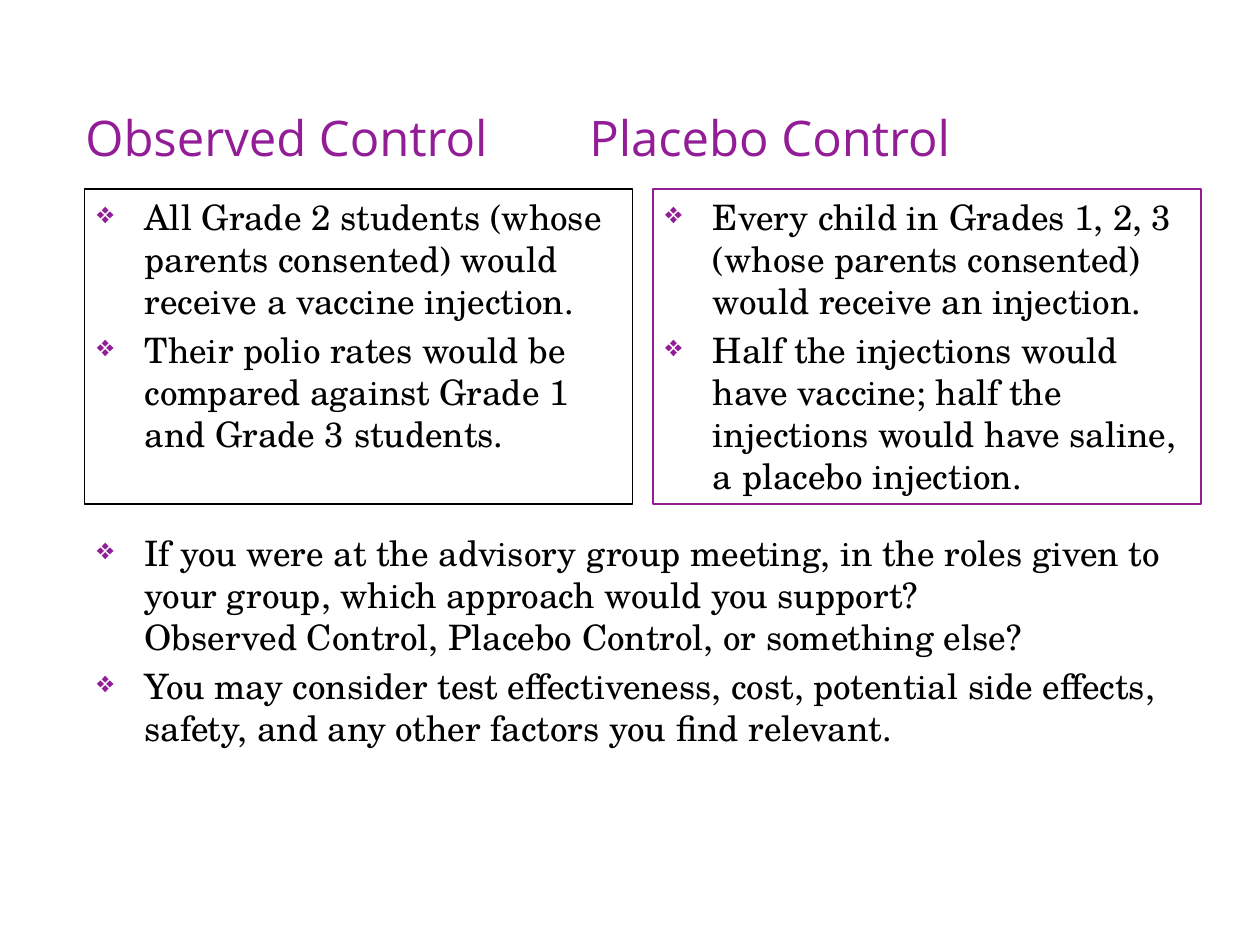
from lxml.etree import SubElement
from pptx import Presentation
from pptx.dml.color import RGBColor
from pptx.enum.shapes import MSO_SHAPE as Shape
from pptx.enum.text import MSO_ANCHOR as Anchor, PP_ALIGN as Align
from pptx.oxml.ns import qn
from pptx.util import Inches, Pt

PURPLE = "921D97"
BLACK = "000000"
MARGIN = 0.67
PANEL_TOP, PANEL_WIDTH, PANEL_HEIGHT = 1.5, 4.35, 2.5
PANEL_STEP = 4.51

PANELS = [
    (BLACK, 0.75, [
        "All Grade 2 students (whose parents consented) would receive a vaccine injection.",
        "Their polio rates would be compared against Grade 1 and Grade 3 students.",
    ]),
    (PURPLE, 1, [
        "Every child in Grades 1, 2, 3 (whose parents consented) would receive an injection.",
        "Half the injections would have vaccine; half the injections would have saline, a placebo injection.",
    ]),
]
QUESTIONS = [
    "If you were at the advisory group meeting, in the roles given to your group, "
    "which approach would you support? \vObserved Control, Placebo Control, or something else?",
    "You may consider test effectiveness, cost, potential side effects, safety, "
    "and any other factors you find relevant.",
]


def color(value):
    """Turn a hex string into a colour."""
    return RGBColor.from_string(value)


def add_bullet(para):
    """Give a paragraph a purple diamond bullet with a hanging indent."""
    props = para._p.get_or_add_pPr()
    props.set("marL", str(Inches(0.38)))
    props.set("indent", str(-Inches(0.38)))
    bullet_color = SubElement(props, qn("a:buClr"))
    SubElement(bullet_color, qn("a:srgbClr"), val=PURPLE)
    SubElement(props, qn("a:buSzPct"), val="85000")
    SubElement(props, qn("a:buChar"), char="❖")


def write(box, lines, size=20, font="TeX Gyre Schola", fill=BLACK,
          anchor=Anchor.TOP, bullets=True):
    """Fill a box with one formatted paragraph per line."""
    frame = box.text_frame
    frame.word_wrap = True
    frame.vertical_anchor = anchor
    for index, line in enumerate(lines):
        para = frame.add_paragraph() if index else frame.paragraphs[0]
        para.text = line
        para.alignment = Align.LEFT
        if bullets:
            para.space_before = Pt(size * 0.2)
            add_bullet(para)
        for span in para.runs:
            span.font.size = Pt(size)
            span.font.name = font
            span.font.color.rgb = color(fill)


def add_text(page, left, top, width, height, lines, **style):
    """Add a text box and return it."""
    box = page.shapes.add_textbox(Inches(left), Inches(top), Inches(width), Inches(height))
    write(box, lines, **style)
    return box


def add_panel(page, left, line_color, line_width, lines):
    """Add an outlined panel of bulleted text."""
    box = page.shapes.add_shape(Shape.RECTANGLE, Inches(left), Inches(PANEL_TOP),
                                Inches(PANEL_WIDTH), Inches(PANEL_HEIGHT))
    box.shadow.inherit = False
    box.fill.background()
    box.line.color.rgb = color(line_color)
    box.line.width = Pt(line_width)
    write(box, lines)


def main():
    """Build and save the slide."""
    deck = Presentation()
    deck.slide_width, deck.slide_height = Inches(10), Inches(7.5)
    page = deck.slides.add_slide(deck.slide_layouts[6])
    title = add_text(page, 0.58, 0.58, 8.93, 0.75, ["Observed Control \t\tPlacebo Control"],
                     size=28, font="Open Sans", fill=PURPLE, anchor=Anchor.BOTTOM, bullets=False)
    title.text_frame.margin_bottom = Inches(0.01)
    for index, panel in enumerate(PANELS):
        add_panel(page, MARGIN + index * PANEL_STEP, *panel)
    add_text(page, MARGIN, 4.17, 8.87, 2.75, QUESTIONS)
    deck.save("out.pptx")


if __name__ == "__main__":
    main()
